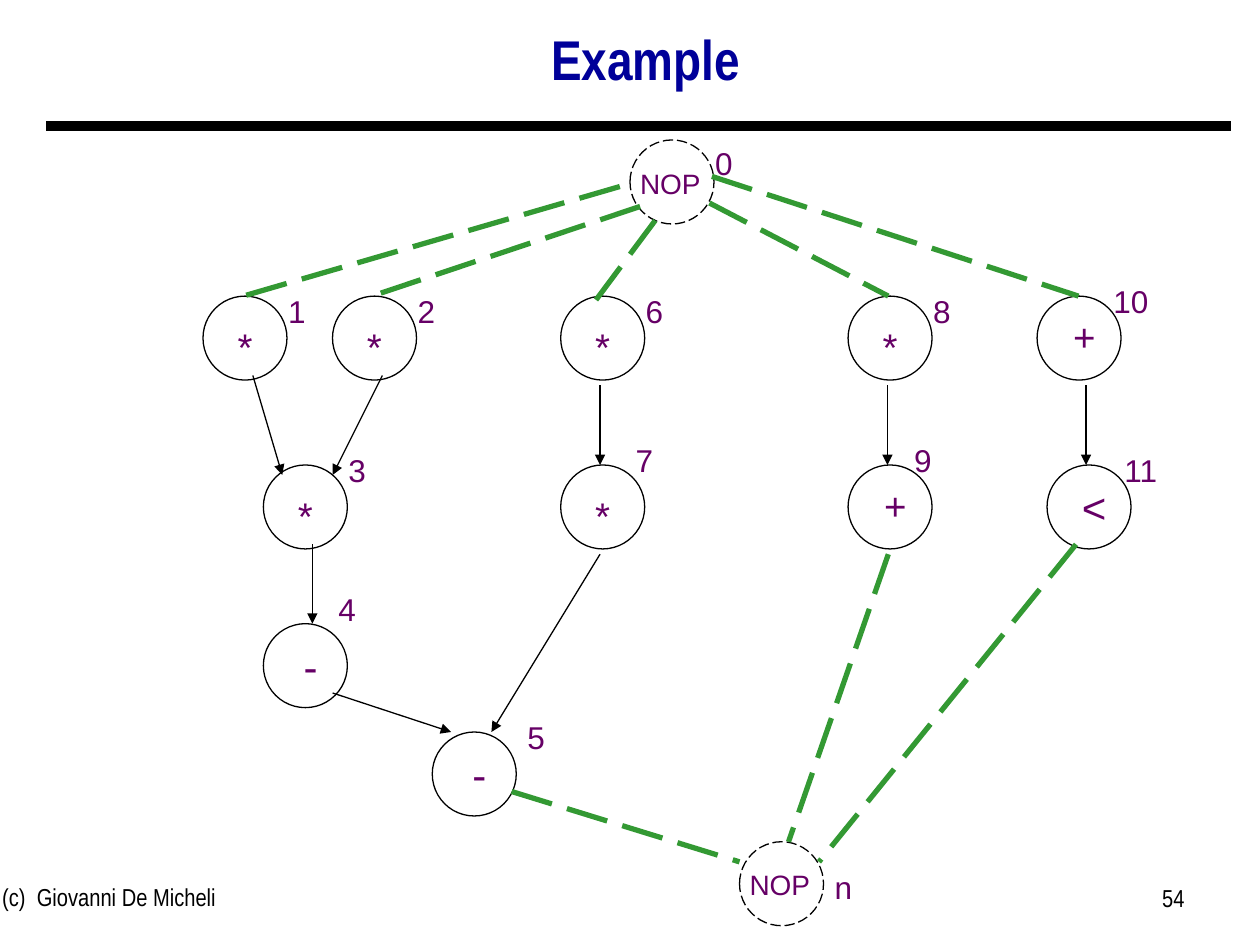
import dataclasses
import pptx
import pptx.dml.color
import pptx.enum.dml
import pptx.enum.shapes
import pptx.enum.text
import pptx.oxml
import pptx.oxml.ns
import pptx.util

Pt = pptx.util.Pt
RGB = pptx.dml.color.RGBColor.from_string
ALIGN = pptx.enum.text.PP_ALIGN
DASH = pptx.enum.dml.MSO_LINE.LONG_DASH


@dataclasses.dataclass(frozen=True)
class Theme:
    """Colours, fonts and sizes of the slide."""
    ink: str = "000000"
    head: str = "000099"
    mark: str = "660066"
    green: str = "339933"
    narrow: str = "Arial Narrow"
    sans: str = "Arial"
    title: int = 32
    foot: int = 14
    label: int = 18
    nop: int = 16
    sign: int = 22
    big: int = 24
    thin: float = 0.75
    thick: int = 3
    bar: int = 6
    node: int = 48


THEME = Theme()

NODES = {
    "0": ("NOP", 252, 8, 39.6, -1.4),
    "1": ("*", 8, 97.2, 39.6, -5.8),
    "2": ("*", 82, 97.2, 39.6, -5.8),
    "6": ("*", 212.4, 97.2, 39.6, -5.8),
    "8": ("*", 376.6, 97.2, 39.6, -5.8),
    "10": ("+", 484.6, 97.2, 33.8, -11.5),
    "3": ("*", 42.5, 193.7, 39.6, -11.5),
    "7": ("*", 212.4, 193.7, 33.8, -17.3),
    "9": ("+", 376.6, 193.7, 28.8, -17.3),
    "11": ("<", 490.3, 193.7, 33.8, -11.5),
    "4": ("-", 42.5, 284.4, 33.8, -23),
    "5": ("-", 139, 346.3, 45.4, -11.5),
    "n": ("NOP", 314.6, 409, 45.4, 11.5),
}

SIGNS = {
    "*": (6, 12, 36, 34, THEME.sign),
    "+": (6, 6, 42, 34, THEME.sign),
    "-": (6, 6, 42, 36, THEME.big),
    "<": (6, 6, 42, 36, THEME.big),
    "NOP": (-5.5, 11.5, 57, 26.6, THEME.nop),
}

FLOW = [
    ("1", 28.5, 45.4, "3", 10.8, 5.7),
    ("2", 28.5, 45.4, "3", 39.6, 5.7),
    ("6", 22.5, 51, "7", 22.5, 0),
    ("8", 22.5, 51, "9", 22.5, 0),
    ("10", 28, 51, "11", 22.3, 0),
    ("3", 28, 45.4, "4", 28, 0),
    ("4", 39.6, 39.6, "5", 10.8, 0),
    ("7", 22.5, 51, "5", 33.8, 0),
]

LINKS = [
    ("0", -5.8, 26.6, "1", 23, 0),
    ("0", 5.8, 38, "2", 22.5, 0),
    ("0", 14.4, 46, "6", 20.2, 2.2),
    ("0", 45.4, 36, "8", 23, 0),
    ("0", 46.8, 20.8, "10", 23.7, 0),
    ("5", 45.4, 34, "n", 0, 11.5),
    ("9", 23, 51, "n", 28, 0),
    ("11", 16.6, 45.4, "n", 45.4, 11.5),
]


def add_run(para, text, size, font, color, bold=False):
    """Add one styled run to a paragraph."""
    run = para.add_run()
    run.text = text
    run.font.size = Pt(size)
    run.font.name = font
    run.font.bold = bold
    run.font.color.rgb = RGB(color)


def add_text(slide, box, text, size, font, color, align=ALIGN.CENTER):
    """Add a one-line text box."""
    frame = slide.shapes.add_textbox(*map(Pt, box)).text_frame
    frame.word_wrap = True
    para = frame.paragraphs[0]
    para.alignment = align
    add_run(para, text, size, font, color)


def add_line(slide, start, end, color, width, dash=False, arrow=False):
    """Add a straight line, dashed or with an arrowhead on request."""
    kind = pptx.enum.shapes.MSO_CONNECTOR.STRAIGHT
    line = slide.shapes.add_connector(kind, *map(Pt, (*start, *end)))
    line.line.color.rgb = RGB(color)
    line.line.width = Pt(width)
    if dash:
        line.line.dash_style = DASH
    make = pptx.oxml.ns.qn
    if arrow:
        tip = line.line._get_or_add_ln().makeelement(make("a:tailEnd"), {"type": "triangle"})
        line.line._get_or_add_ln().append(tip)
    props = line._element.spPr
    props.append(props.makeelement(make("a:effectLst"), {}))


def draw_head(slide, box):
    """Place the title and the bar below it."""
    left, top, wide, high = box
    title = slide.shapes.title
    title.left, title.top = Pt(left + 56), Pt(top)
    title.width, title.height = Pt(612), Pt(high)
    frame = title.text_frame
    frame.vertical_anchor = pptx.enum.text.MSO_ANCHOR.MIDDLE
    para = frame.paragraphs[0]
    para.alignment = ALIGN.CENTER
    para.line_spacing = 0.9
    add_run(para, "Example", THEME.title, THEME.narrow, THEME.head, True)
    base = top + high + 0.7
    add_line(slide, (left + 19.5, base), (left + wide - 16.5, base), THEME.ink, THEME.bar)


def draw_node(slide, box, name, sign, shift):
    """Place a circle with its sign and its label."""
    left, top, wide, high = box
    oval = slide.shapes.add_shape(pptx.enum.shapes.MSO_SHAPE.OVAL, *map(Pt, box))
    oval.shadow.inherit = False
    oval.fill.background()
    oval.line.color.rgb = RGB(THEME.ink)
    oval.line.width = Pt(THEME.thin)
    if sign == "NOP":
        oval.line.dash_style = DASH
    x, y, w, h, size = SIGNS[sign]
    add_text(slide, (left + x, top + y, w, h), sign, size, THEME.sans, THEME.mark)
    x, y = shift
    w = 28 if len(name) == 1 else 39.6
    add_text(slide, (left + x, top + y, w, 28.8), name, THEME.label, THEME.sans, THEME.mark)


def draw_graph(slide, box):
    """Place the nodes and the edges of the sequencing graph."""
    left, top = box[:2]
    spots = {name: (left + node[1], top + node[2]) for name, node in NODES.items()}
    for name, (sign, _, _, *shift) in NODES.items():
        draw_node(slide, (*spots[name], THEME.node, THEME.node), name, sign, shift)
    for edges, color, width, dash in (
        (FLOW, THEME.ink, THEME.thin, False),
        (LINKS, THEME.green, THEME.thick, True),
    ):
        for tail, ax, ay, head, bx, by in edges:
            start = spots[tail][0] + ax, spots[tail][1] + ay
            end = spots[head][0] + bx, spots[head][1] + by
            add_line(slide, start, end, color, width, dash, not dash)


def draw_foot(slide, box):
    """Place the author line and the page number."""
    left, top, wide, high = box
    style = THEME.foot, THEME.narrow, THEME.ink
    add_text(slide, (left, top, 228, high), "(c)\u00a0 Giovanni De Micheli".replace("\u00a0", " "), *style, ALIGN.LEFT)
    add_text(slide, (left + wide - 168, top + 0.7, 168, high), "54", *style, ALIGN.RIGHT)


def main():
    """Build and save the slide."""
    deck = pptx.Presentation()
    deck.slide_width, deck.slide_height = Pt(720), Pt(540)
    slide = deck.slides.add_slide(deck.slide_layouts[5])
    draw_head(slide, (7, 0, 713, 71.3))
    draw_graph(slide, (108, 72, 540, 460))
    draw_foot(slide, (-5.8, 500.4, 689.8, 37.4))
    deck.save("out.pptx")


if __name__ == "__main__":
    main()
